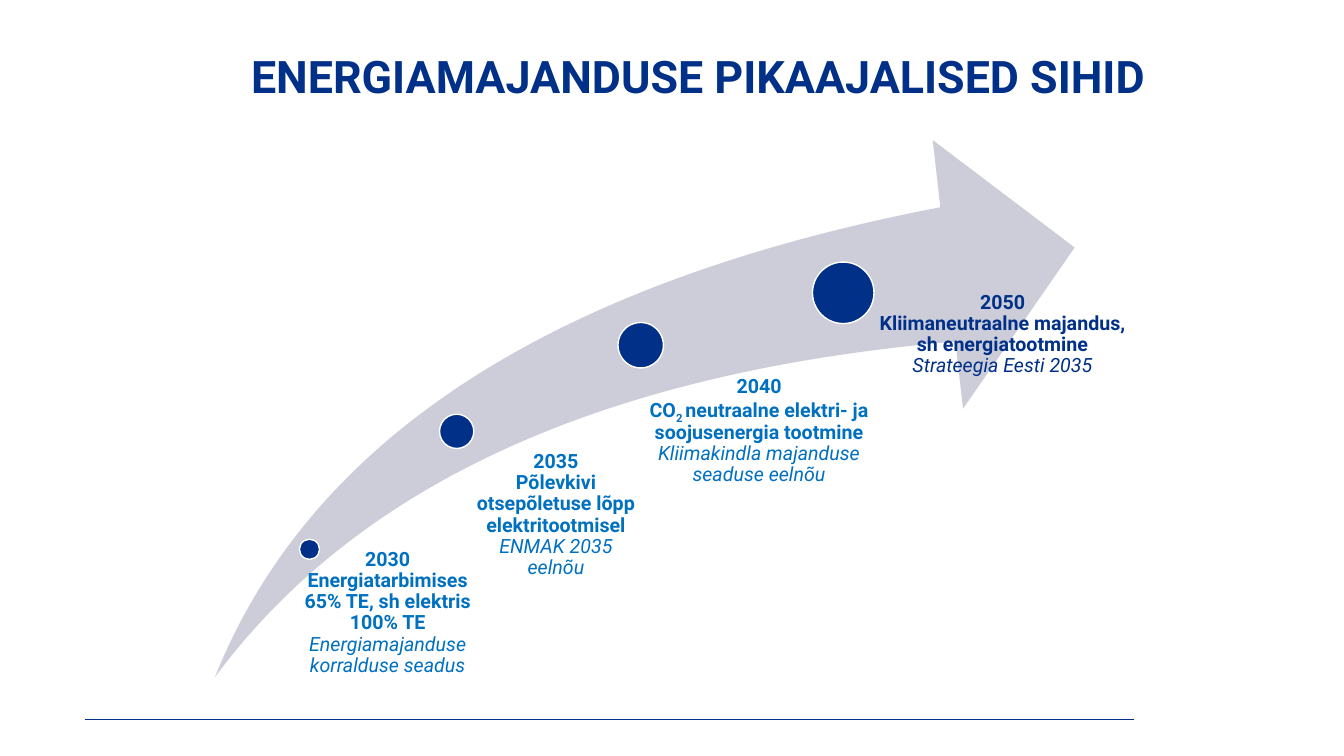
from dataclasses import dataclass

from lxml import etree
from pptx import Presentation, util as u
from pptx.dml.color import RGBColor
from pptx.enum import shapes, text
from pptx.oxml.ns import qn

SLIDE_WIDTH = u.Inches(13.333)
SLIDE_HEIGHT = u.Inches(7.5)
FONT = "Roboto"
NAVY = "003087"
BLUE = "0070C0"
GREY = "CCCDD9"
WHITE = "FFFFFF"


def across(percent):
    return round(SLIDE_WIDTH * percent / 100)


def down(percent):
    return round(SLIDE_HEIGHT * percent / 100)


@dataclass
class Box:
    left: float
    top: float
    width: float
    height: float

    def lengths(self):
        return across(self.left), down(self.top), across(self.width), down(self.height)


@dataclass
class Milestone:
    center: tuple
    diameter: float
    label_at: tuple
    label_width: float
    inset: float
    color: str
    year: str
    goal: list
    source: str


MILESTONES = [
    Milestone((7.05, 54.13), 1.5, (4.88, 54.13), 15.23, 0.75, BLUE, "2030",
              ["Energiatarbimises 65% TE, sh elektris 100% TE"],
              "Energiamajanduse korralduse seadus"),
    Milestone((18, 38.53), 2.55, (18, 41.2), 13.43, 1.35, BLUE, "2035",
              ["Põlevkivi otsepõletuse lõpp elektritootmisel"],
              "ENMAK 2035 eelnõu"),
    Milestone((31.69, 27.13), 3.38, (28.95, 31.33), 21.3, 1.8, BLUE, "2040",
              ["CO", "2 ", "neutraalne elektri- ja soojusenergia tootmine"],
              "Kliimakindla majanduse seaduse eelnõu"),
    Milestone((46.76, 20.2), 4.58, (46.58, 20.13), 21.68, 2.4, NAVY, "2050",
              ["Kliimaneutraalne majandus, sh energiatootmine"],
              "Strateegia Eesti 2035"),
]


def rgb(value):
    return RGBColor.from_string(value)


def format_para(para, size, color, align, bold=True, italic=False):
    para.alignment = align
    para.line_spacing = 0.9
    para.space_before = u.Pt(0)
    font = para.font
    font.name = FONT
    font.size = u.Pt(size)
    font.bold = bold
    font.italic = italic
    font.color.rgb = rgb(color)


def add_title(page, box):
    title = page.shapes.title
    title.left, title.top, title.width, title.height = box.lengths()
    frame = title.text_frame
    frame.text = "ENERGIAMAJANDUSE PIKAAJALISED SIHID"
    frame.vertical_anchor = text.MSO_ANCHOR.MIDDLE
    format_para(frame.paragraphs[0], 32, NAVY, text.PP_ALIGN.LEFT)


def add_footer_line(page, box):
    left, top, width, height = box.lengths()
    line = page.shapes.add_connector(
        shapes.MSO_CONNECTOR.STRAIGHT, left, top, left + width, top + height)
    line.line.color.rgb = rgb(NAVY)
    line.line.width = u.Pt(1)
    etree.SubElement(line._element.spPr, qn("a:effectLst"))


def add_filled(page, kind, lengths, fill):
    shape = page.shapes.add_shape(kind, *lengths)
    shape.shadow.inherit = False
    shape.fill.solid()
    shape.fill.fore_color.rgb = rgb(fill)
    return shape


def add_dot(page, box, milestone):
    size = across(milestone.diameter)
    x, y = milestone.center
    left = across(box.left + x) - size // 2
    top = down(box.top + y) - size // 2
    dot = add_filled(page, shapes.MSO_SHAPE.OVAL, (left, top, size, size), NAVY)
    dot.line.color.rgb = rgb(WHITE)
    dot.line.width = u.Pt(1)


def add_label(page, box, milestone):
    x, y = milestone.label_at
    area = Box(box.left + x, box.top + y, milestone.label_width, box.height - y)
    frame = page.shapes.add_textbox(*area.lengths()).text_frame
    frame.word_wrap = True
    frame.margin_left = across(milestone.inset)
    frame.margin_top = frame.margin_right = frame.margin_bottom = 0
    rows = [[milestone.year], milestone.goal, [milestone.source]]
    for index, pieces in enumerate(rows):
        para = frame.add_paragraph() if index else frame.paragraphs[0]
        for piece in pieces:
            span = para.add_run()
            span.text = piece
            if piece == "2 ":
                span._r.get_or_add_rPr().set("baseline", "-25000")
        is_source = index == 2
        format_para(para, 14, milestone.color, text.PP_ALIGN.CENTER,
                    bold=not is_source, italic=is_source)


def add_roadmap(page, box):
    arrow = add_filled(page, shapes.MSO_SHAPE.SWOOSH_ARROW, box.lengths(), GREY)
    arrow.adjustments[0] = 0.25
    arrow.adjustments[1] = 0.25
    arrow.line.fill.background()
    for milestone in MILESTONES:
        add_dot(page, box, milestone)
        add_label(page, box, milestone)


def main():
    deck = Presentation()
    deck.slide_width = SLIDE_WIDTH
    deck.slide_height = SLIDE_HEIGHT
    page = deck.slides.add_slide(deck.slide_layouts.get_by_name("Title Only"))
    add_footer_line(page, Box(6.3, 95.2, 78.08, 0))
    add_title(page, Box(17.93, 6.13, 77.55, 8.67))
    add_roadmap(page, Box(15.98, 18.53, 63.98, 71.07))
    deck.save("out.pptx")


if __name__ == "__main__":
    main()
